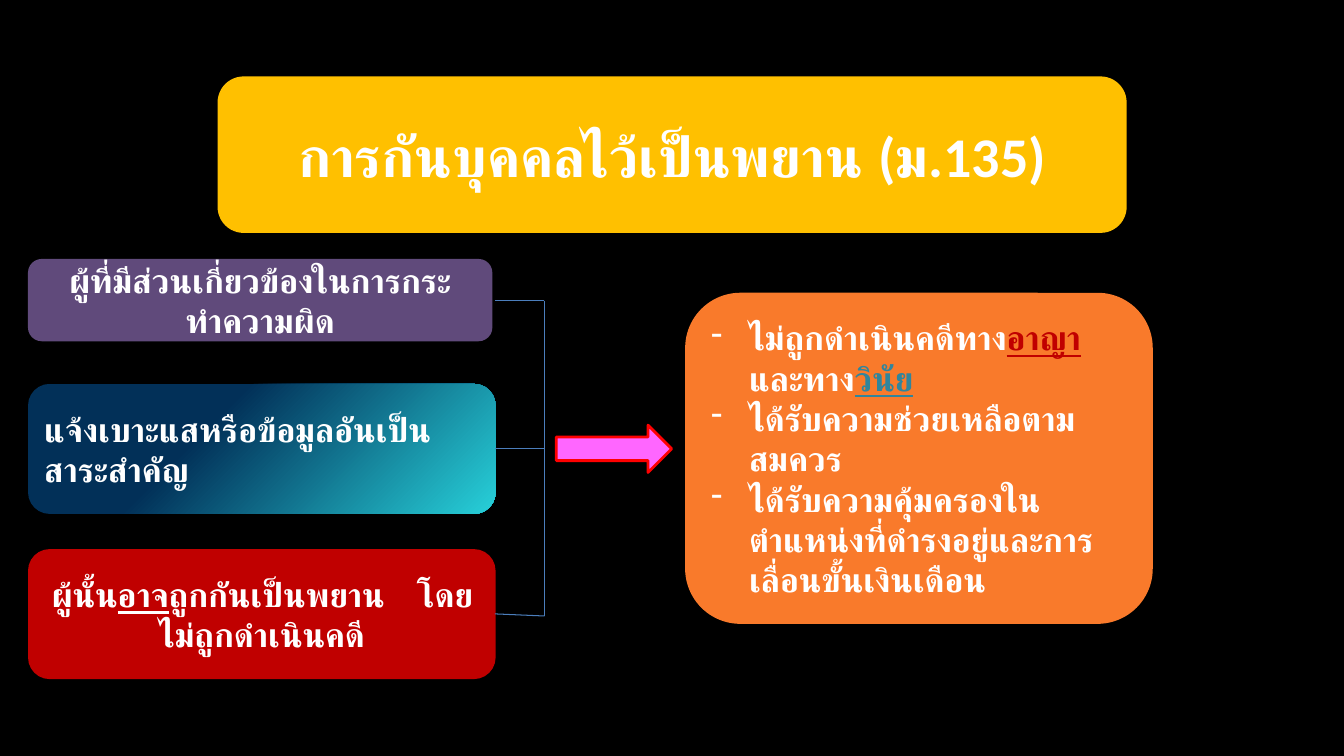
from lxml import etree
from pptx import Presentation
from pptx.dml.color import RGBColor
from pptx.enum.lang import MSO_LANGUAGE_ID
from pptx.enum.shapes import MSO_CONNECTOR, MSO_SHAPE
from pptx.enum.text import MSO_ANCHOR, MSO_AUTO_SIZE, PP_ALIGN
from pptx.oxml.ns import qn
from pptx.util import Pt


def paint(color, code):
    color.rgb = RGBColor.from_string(code)


def write(para, text, size=24, code="FFFFFF", under=False):
    run = para.add_run()
    run.text = text
    font = run.font
    font.name, font.size, font.bold = "Calibri", Pt(size), True
    font.language_id = MSO_LANGUAGE_ID.THAI
    paint(font.color, code)
    if under:
        font.underline = True
    return run


# Slide with a black ground
deck = Presentation()
deck.slide_width, deck.slide_height = Pt(960), Pt(540)
slide = deck.slides.add_slide(deck.slide_layouts[1])
ground = slide.background.fill
ground.solid()
paint(ground.fore_color, "000000")
shapes = slide.shapes
title, body = shapes.title, slide.placeholders[1]

# Panels and arrow: kind, place, fill
round_box = MSO_SHAPE.ROUNDED_RECTANGLE
parts = {
    "title": (round_box, 155.4, 54.6, 649.4, 111.8, "FFC000"),
    "person": (round_box, 20, 185, 331.7, 58.8, "604A7B"),
    "clue": (round_box, 20, 274.2, 334, 92.9, None),
    "witness": (round_box, 20, 392.2, 334, 92.9, "C00000"),
    "arrow": (MSO_SHAPE.RIGHT_ARROW, 397.4, 303.7, 82.4, 33.8, "FF66FF"),
    "list": (round_box, 489.4, 209.1, 334, 236.5, "F97A2B"),
}
boxes = {}
for name, (kind, left, top, width, height, code) in parts.items():
    box = shapes.add_shape(kind, Pt(left), Pt(top), Pt(width), Pt(height))
    box.shadow.inherit = False
    box.line.fill.background()
    if code:
        box.fill.solid()
        paint(box.fill.fore_color, code)
    box.text_frame.word_wrap = True
    box.text_frame.vertical_anchor = MSO_ANCHOR.MIDDLE
    boxes[name] = box

# Blue gradient of the clue panel
blend = boxes["clue"].fill
blend.gradient()
blend.gradient_angle = 315
for stop, (spot, code) in zip(blend.gradient_stops, [(0.37, "023058"), (0.98, "26CBD5")]):
    stop.position = spot
    paint(stop.color, code)

# Red edge of the arrow
edge = boxes["arrow"].line
edge.fill.solid()
paint(edge.color, "FF0000")
edge.width = Pt(2)

# Texts of the left panels
para = boxes["person"].text_frame.paragraphs[0]
para.alignment = PP_ALIGN.CENTER
write(para, "ผู้ที่มีส่วนเกี่ยวข้องในการกระทำความผิด")

para = boxes["clue"].text_frame.paragraphs[0]
para.alignment = PP_ALIGN.LEFT
write(para, "แจ้งเบาะแสหรือข้อมูลอันเป็นสาระสำคัญ")

para = boxes["witness"].text_frame.paragraphs[0]
para.alignment = PP_ALIGN.CENTER
write(para, "ผู้นั้น")
write(para, "อาจ", under=True)
write(para, "ถูกกันเป็นพยาน")
gap = write(para, " ")
gap.font._element.set("spc", "1630")
write(para, "โดยไม่ถูกดำเนินคดี")

# Bracket that joins the left panels
near, far = 353.5, 388.8
for x1, y1, x2, y2 in [
    (far, 215, far, 440),
    (far, 215, near, 215),
    (far, 440, near, 438.5),
    (near, 320.4, far, 320.4),
]:
    line = shapes.add_connector(MSO_CONNECTOR.STRAIGHT, Pt(x1), Pt(y1), Pt(x2), Pt(y2))
    paint(line.line.color, "4B7EBC")
    line.line.width = Pt(0.75)
    etree.SubElement(line._element.spPr, qn("a:effectLst"))

# Title and list sit on their panels, clear of the round corners
for holder, name, inset in [(title, "title", 5.4), (body, "list", 11.4)]:
    kind, left, top, width, height, code = parts[name]
    holder.left, holder.top = Pt(left + inset), Pt(top + inset)
    holder.width, holder.height = Pt(width - 2 * inset), Pt(height - 2 * inset)
    frame = holder.text_frame
    frame.word_wrap = True
    frame.auto_size = MSO_AUTO_SIZE.NONE
    frame.vertical_anchor = MSO_ANCHOR.MIDDLE
    holder.element.getparent().append(holder.element)

para = title.text_frame.paragraphs[0]
para.alignment = PP_ALIGN.CENTER
write(para, "การกันบุคคลไว้เป็นพยาน (ม.135)", 40)

# Dashed list
items = [
    [("ไม่ถูกดำเนินคดีทาง",), ("อาญา", 24, "C00000", True),
     ("และทาง",), ("วินัย", 24, "31859C", True)],
    [("ได้รับความช่วยเหลือตามสมควร",)],
    [("ได้รับความคุ้มครองในตำแหน่งที่ดำรงอยู่และการเลื่อนขั้นเงินเดือน",)],
]
frame = body.text_frame
for i, item in enumerate(items):
    para = frame.add_paragraph() if i else frame.paragraphs[0]
    para.space_before = Pt(0)
    props = para._p.get_or_add_pPr()
    props.set("marL", str(Pt(27)))
    props.set("indent", str(-Pt(27)))
    etree.SubElement(props, qn("a:buFontTx"))
    etree.SubElement(props, qn("a:buChar")).set("char", "-")
    for part in item:
        write(para, *part)

deck.save("out.pptx")
